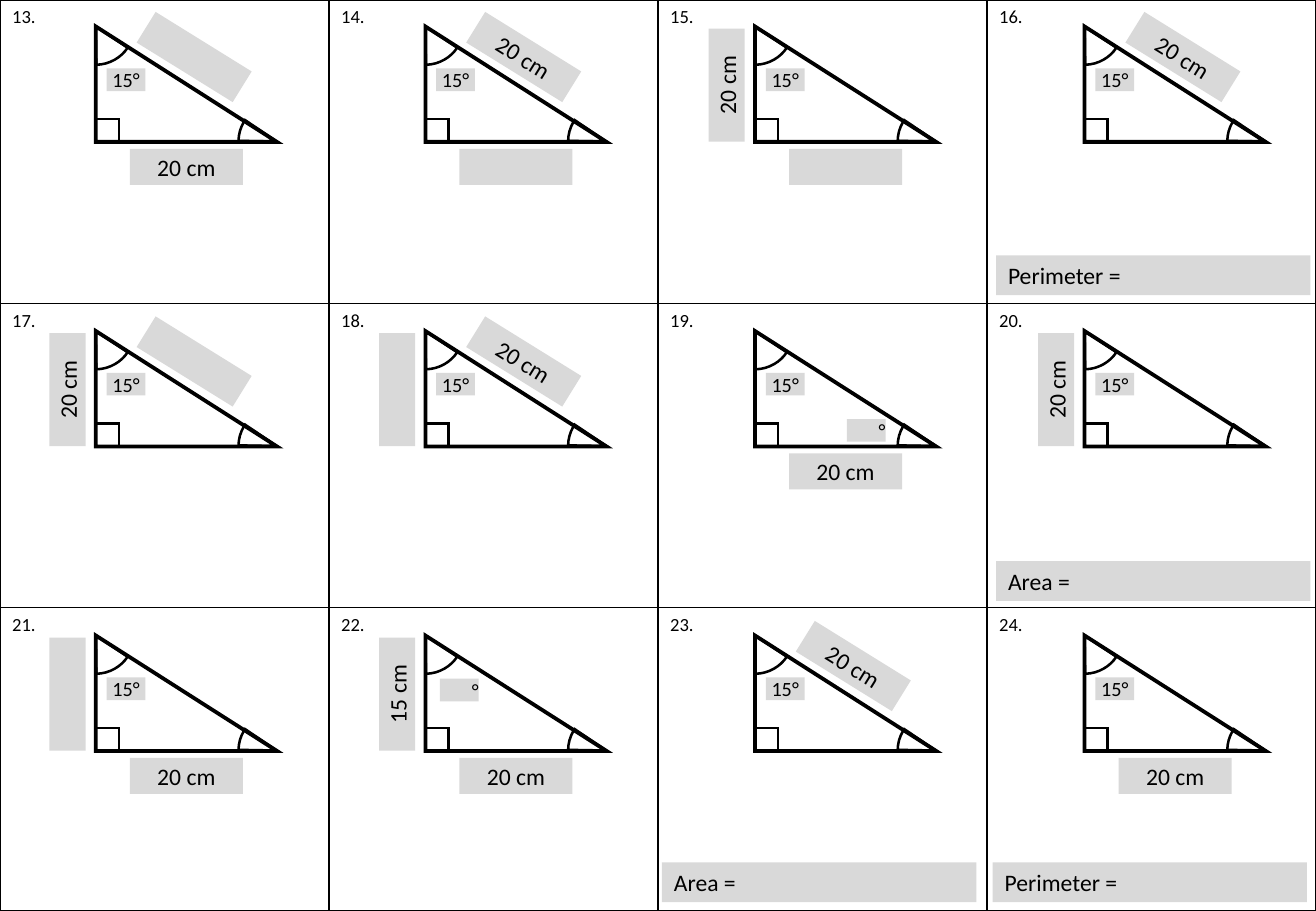
from lxml import etree
from pptx import Presentation, oxml
from pptx.dml.color import RGBColor
from pptx.enum import shapes, text
from pptx.util import Pt

INK = {"black": "000000", "grey": "D9D9D9"}
FONT = "Calibri"
KIND = shapes.MSO_SHAPE
ALIGN = text.PP_ALIGN
NS = 'xmlns:a="http://schemas.openxmlformats.org/drawingml/2006/main"'
black = RGBColor.from_string(INK["black"])
grey = RGBColor.from_string(INK["grey"])

# Slide
deck = Presentation()
deck.slide_width, deck.slide_height = Pt(780), Pt(540)
slide = deck.slides.add_slide(deck.slide_layouts[6])


def outline(group, kind, box, width):
    shape = group.shapes.add_shape(kind, *map(Pt, box))
    shape.shadow.inherit = False
    shape.fill.background()
    shape.line.color.rgb = black
    shape.line.width = Pt(width)
    etree.SubElement(shape.line._ln, oxml.ns.qn("a:miter"), lim="800000")
    return shape


def label(owner, box, words, size=14, align=ALIGN.CENTER, turn=0):
    shape = owner.shapes.add_shape(KIND.RECTANGLE, *map(Pt, box))
    shape.shadow.inherit = False
    shape.fill.solid()
    shape.fill.fore_color.rgb = grey
    shape.line.fill.background()
    shape.rotation = turn
    if words:
        frame = shape.text_frame
        frame.vertical_anchor = text.MSO_ANCHOR.MIDDLE
        if size == 12:
            frame.margin_left = frame.margin_right = 0
        line = frame.paragraphs[0]
        line.text = words
        line.alignment = align
        font = line.runs[0].font
        font.name, font.size = FONT, Pt(size)
        font.color.rgb = black


# Numbered grid
grid = slide.shapes.add_table(3, 4, 0, 0, Pt(780), Pt(540)).table
grid.first_row = grid.horz_banding = False
for col in grid.columns:
    col.width = Pt(195)
for row in grid.rows:
    row.height = Pt(180)
for i, cell in enumerate(grid.iter_cells()):
    line = cell.text_frame.paragraphs[0]
    line.text = f"{13 + i}."
    font = line.runs[0].font
    font.name, font.size = FONT, Pt(11)
    font.color.rgb = black
    cell.fill.background()
    props = cell._tc.get_or_add_tcPr()
    for n, edge in enumerate("LRTB"):
        props.insert(n, oxml.parse_xml(
            f'<a:ln{edge} {NS} w="12700"><a:solidFill>'
            f'<a:srgbClr val="{INK["black"]}"/></a:solidFill></a:ln{edge}>'))

# Side lengths of each triangle: base, height, slope ("" is a blank to fill in)
cards = [
    ("20 cm", None, ""), ("", None, "20 cm"),
    ("", "20 cm", None), (None, None, "20 cm"),
    (None, "20 cm", ""), (None, "", "20 cm"),
    ("20 cm", None, None), (None, "20 cm", None),
    ("20 cm", "", None), ("20 cm", "15 cm", None),
    (None, None, "20 cm"), ("20 cm", None, None),
]
# Offset from the triangle's corner, and turn, of each side's label
spots = [(20.2, 72.5, 0), (-50.3, 24, 270), (24.8, 7.4, 31.8)]
arcs = [(84.6, 45.5, 108.574, 128.349), (-22.7, -22.7, 20.209, 53.518)]

# Triangles
for i, sides in enumerate(cards):
    row, col = divmod(i, 4)
    x, y = 56.8 + 195.35 * col, 15.7 + 180.5 * row
    group = slide.shapes.add_group_shape()
    outline(group, KIND.RIGHT_TRIANGLE, (x, y, 107.3, 68.4), 2.25)
    outline(group, KIND.RECTANGLE, (x, y + 54.7, 13.7, 13.7), 1.5)
    for dx, dy, start, end in arcs:
        arc = outline(group, KIND.PIE, (x + dx, y + dy, 45.4, 45.4), 1.5)
        arc.adjustments[0], arc.adjustments[1] = start, end
    for words, (dx, dy, turn) in zip(sides, spots):
        if words is not None:
            label(group, (x + dx, y + dy, 67, 21.4), words, turn=turn)

    # Angles
    number = 13 + i
    if number == 22:
        label(group, (x + 8.6, y + 25.6, 23, 13.5), "°", 12, ALIGN.RIGHT)
    else:
        label(group, (x + 6.4, y + 24.8, 23, 13.5), "15°", 12)
    if number == 19:
        label(group, (x + 54.4, y + 52.2, 23, 13.5), "°", 12, ALIGN.RIGHT)

# Answer bars
for x, y, words in [(590.4, 151.4, "Perimeter ="), (590.4, 332.6, "Area ="),
                    (392.4, 511.2, "Area ="), (588.4, 511.2, "Perimeter =")]:
    label(slide, (x, y, 186.3, 23.6), words, align=ALIGN.LEFT)

deck.save("out.pptx")
